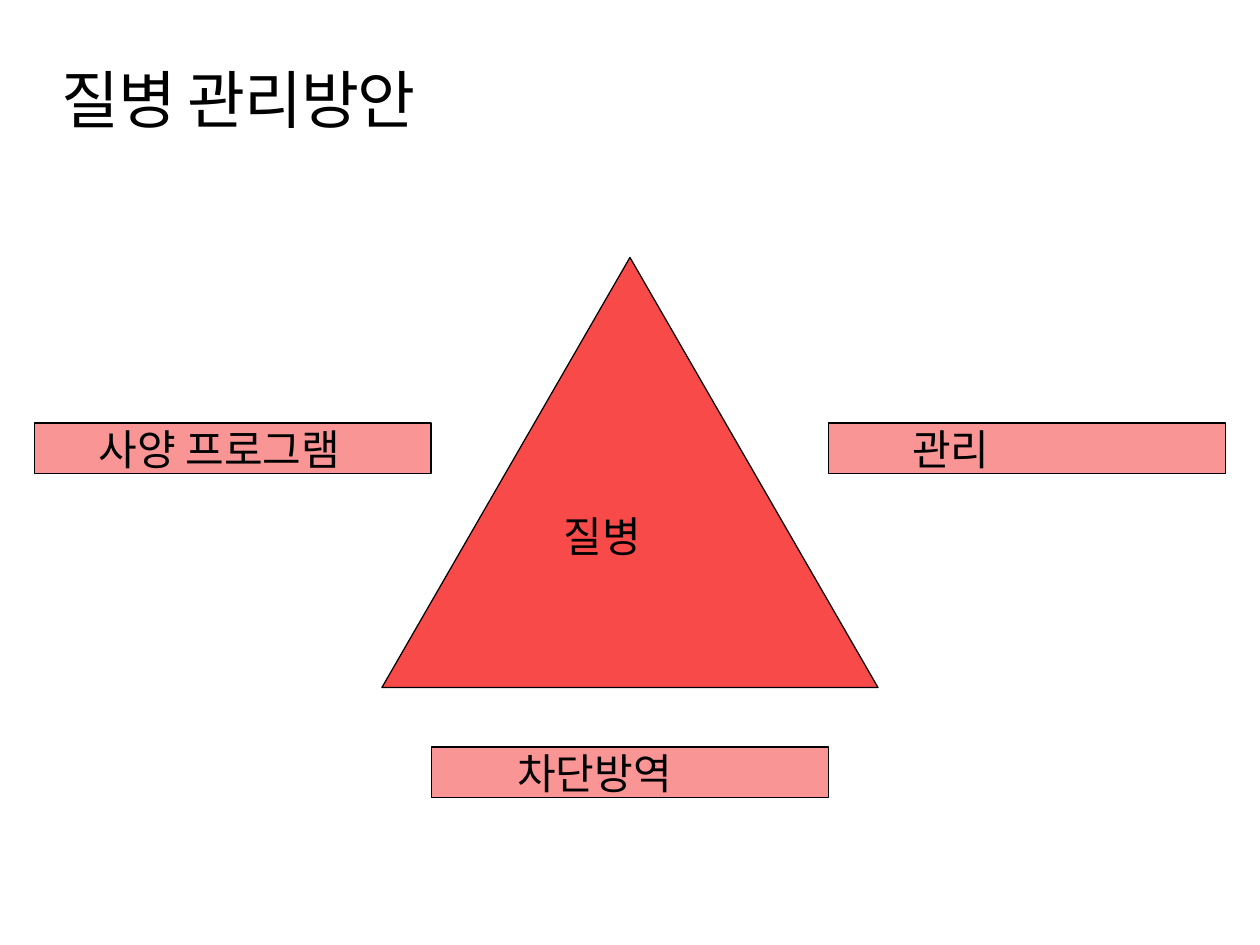
from dataclasses import dataclass

from lxml.etree import SubElement
from pptx import Presentation
from pptx.dml.color import RGBColor
from pptx.enum.shapes import MSO_SHAPE as Preset
from pptx.enum.text import MSO_ANCHOR as Anchor, MSO_AUTO_SIZE as AutoSize, PP_ALIGN as Align
from pptx.oxml.ns import qn
from pptx.util import Cm, Pt


@dataclass(frozen=True)
class Theme:
    ink: RGBColor = RGBColor(0, 0, 0)
    disease: RGBColor = RGBColor(0xF9, 0x4A, 0x4A)
    measure: RGBColor = RGBColor(0xF9, 0x95, 0x95)
    font: str = "Calibri"
    title: Pt = Pt(36)
    label: Pt = Pt(24)
    outline: Pt = Pt(0.72)


theme = Theme()


def write(shape, text, size, margin, indent=0, align=Align.LEFT):
    """Put one left-indented line into a shape and return its paragraph and run."""
    frame = shape.text_frame
    frame.margin_left = frame.margin_right = frame.margin_top = frame.margin_bottom = 0
    frame.word_wrap = True
    frame.auto_size = AutoSize.SHAPE_TO_FIT_TEXT
    frame.vertical_anchor = Anchor.TOP
    line = frame.paragraphs[0]
    line.alignment = align
    props = line._p.get_or_add_pPr()
    props.set("marL", str(Cm(margin)))
    props.set("indent", str(Cm(indent)))
    run = line.add_run()
    run.text = text
    run.font.size = size
    run.font.name = theme.font
    run.font.color.rgb = theme.ink
    SubElement(run._r.get_or_add_rPr(), qn("a:ea"), typeface=theme.font)
    return line, run


def add_outlined(preset, left, top, width, height, fill):
    shape = slide.shapes.add_shape(preset, Cm(left), Cm(top), Cm(width), Cm(height))
    shape.shadow.inherit = False
    shape.fill.solid()
    shape.fill.fore_color.rgb = fill
    shape.line.color.rgb = theme.ink
    shape.line.width = theme.outline
    return shape


slide_width, slide_height = 25.4, 19.05
deck = Presentation()
deck.slide_width, deck.slide_height = Cm(slide_width), Cm(slide_height)
slide = deck.slides.add_slide(deck.slide_layouts[6])

# Disease triangle, centred on the slide
base = 10
add_outlined(Preset.ISOSCELES_TRIANGLE, (slide_width - base) / 2, 5.19, base, 8.67, theme.disease)
disease = slide.shapes.add_textbox(Cm(11.2), Cm(10.29), Cm(2.84), Cm(1.02))
write(disease, "질병", theme.label, 0.03, 0.13, Align.JUSTIFY)

# Control measures: one on each side, one below
bar_width, bar_height, edge = 8, 1.02, 0.69
side_top, below_top = 8.53, 15.06
measures = [
    ("사양 프로그램", edge, side_top, 1.3),
    ("관리", slide_width - edge - bar_width, side_top, 1.68),
    ("차단방역", (slide_width - bar_width) / 2, below_top, 1.73),
]
for name, left, top, margin in measures:
    bar = add_outlined(Preset.RECTANGLE, left, top, bar_width, bar_height, theme.measure)
    write(bar, name, theme.label, margin)

# Title
title = slide.shapes.add_textbox(Cm(1.22), Cm(1.37), Cm(19.56), Cm(1.4))
title_line, title_run = write(title, "질병 관리방안", theme.title, 0.03)
title_line.line_spacing = Pt(38.9)
title_run.font._element.set("spc", "-80")

deck.save("out.pptx")
